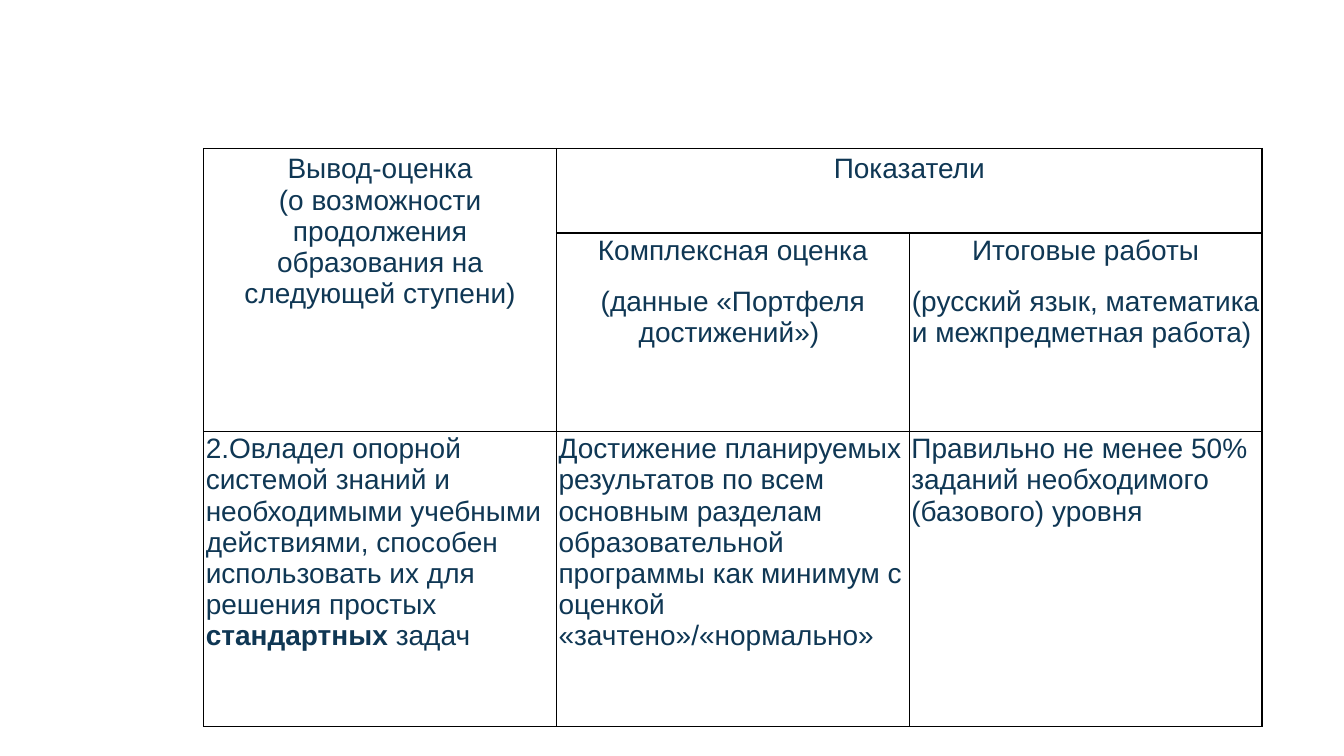
from lxml import etree
from pptx import Presentation
from pptx.dml.color import RGBColor
from pptx.enum.text import PP_ALIGN
from pptx.oxml.ns import qn
from pptx.util import Pt

CENTER, LEFT = PP_ALIGN.CENTER, PP_ALIGN.LEFT
COLORS = {"text": "0F3754", "border": "000000"}
FONT = {"name": "Arial", "size": Pt(20)}
TABLE_BOX = (145.5, 106, 756)
ROW_HEIGHTS = (60.5, 141.5, 211)
COLUMN_COUNT = 3
TIGHT_MARGINS = {
    "margin_left": Pt(1.5), "margin_right": Pt(1.5),
    "margin_top": Pt(1.5), "margin_bottom": Pt(1.5),
}
HEADING = {"alignment": CENTER}
SUBHEADING = {"alignment": CENTER, "space_after": Pt(14.2)}
BODY = {"alignment": LEFT, "space_after": Pt(14.2)}

CELLS = [
    (0, 0, HEADING, {}, [
        ["Вывод-оценка"],
        ["(о возможности продолжения образования на следующей ступени)"],
    ]),
    (0, 1, HEADING, {}, [["Показатели"]]),
    (1, 1, SUBHEADING, TIGHT_MARGINS, [
        ["Комплексная оценка"], ["(данные «Портфеля достижений») "],
    ]),
    (1, 2, SUBHEADING, TIGHT_MARGINS, [
        ["Итоговые работы"],
        ["(русский язык, математика и межпредметная работа) "],
    ]),
    (2, 0, BODY, TIGHT_MARGINS, [[
        "2.Овладел опорной системой знаний и необходимыми учебными "
        "действиями, способен использовать их для решения простых ",
        "стандартных", " задач",
    ]]),
    (2, 1, BODY, TIGHT_MARGINS, [[
        "Достижение планируемых результатов по всем основным разделам "
        "образовательной программы как минимум с оценкой "
        "«зачтено»/«нормально»",
    ]]),
    (2, 2, BODY, TIGHT_MARGINS, [[
        "Правильно не менее 50% заданий необходимого (базового) уровня",
    ]]),
]


def apply_format(target, values):
    for name, value in values.items():
        setattr(target, name, value)


def frame_cell(cell):
    properties = cell._tc.get_or_add_tcPr()
    for side in ("a:lnL", "a:lnR", "a:lnT", "a:lnB"):
        line = etree.SubElement(properties, qn(side), w=str(Pt(1)))
        fill = etree.SubElement(line, qn("a:solidFill"))
        etree.SubElement(fill, qn("a:srgbClr"), val=COLORS["border"])
    cell.fill.background()


def write_cell(cell, paragraph_format, margins, paragraphs):
    apply_format(cell, margins)
    frame = cell.text_frame
    for index, texts in enumerate(paragraphs):
        para = frame.add_paragraph() if index else frame.paragraphs[0]
        apply_format(para, paragraph_format)
        for position, text in enumerate(texts):
            span = para.add_run()
            span.text = text
            apply_format(span.font, {**FONT, "bold": position == 1})
            span.font.color.rgb = RGBColor.from_string(COLORS["text"])


def add_assessment_table(page, box):
    left, top, width = box
    shape = page.shapes.add_table(
        len(ROW_HEIGHTS), COLUMN_COUNT,
        Pt(left), Pt(top), Pt(width), Pt(sum(ROW_HEIGHTS)),
    )
    table = shape.table
    apply_format(table, {"first_row": False, "horz_banding": False})
    for column in table.columns:
        column.width = Pt(width / COLUMN_COUNT)
    for row, height in zip(table.rows, ROW_HEIGHTS):
        row.height = Pt(height)
    for cell in table.iter_cells():
        frame_cell(cell)
    table.cell(0, 0).merge(table.cell(1, 0))
    table.cell(0, 1).merge(table.cell(0, 2))
    for row, column, paragraph_format, margins, paragraphs in CELLS:
        write_cell(table.cell(row, column), paragraph_format, margins, paragraphs)


def main():
    deck = Presentation()
    apply_format(deck, {"slide_width": Pt(960), "slide_height": Pt(540)})
    page = deck.slides.add_slide(deck.slide_layouts.get_by_name("Blank"))
    add_assessment_table(page, TABLE_BOX)
    deck.save("out.pptx")


if __name__ == "__main__":
    main()
